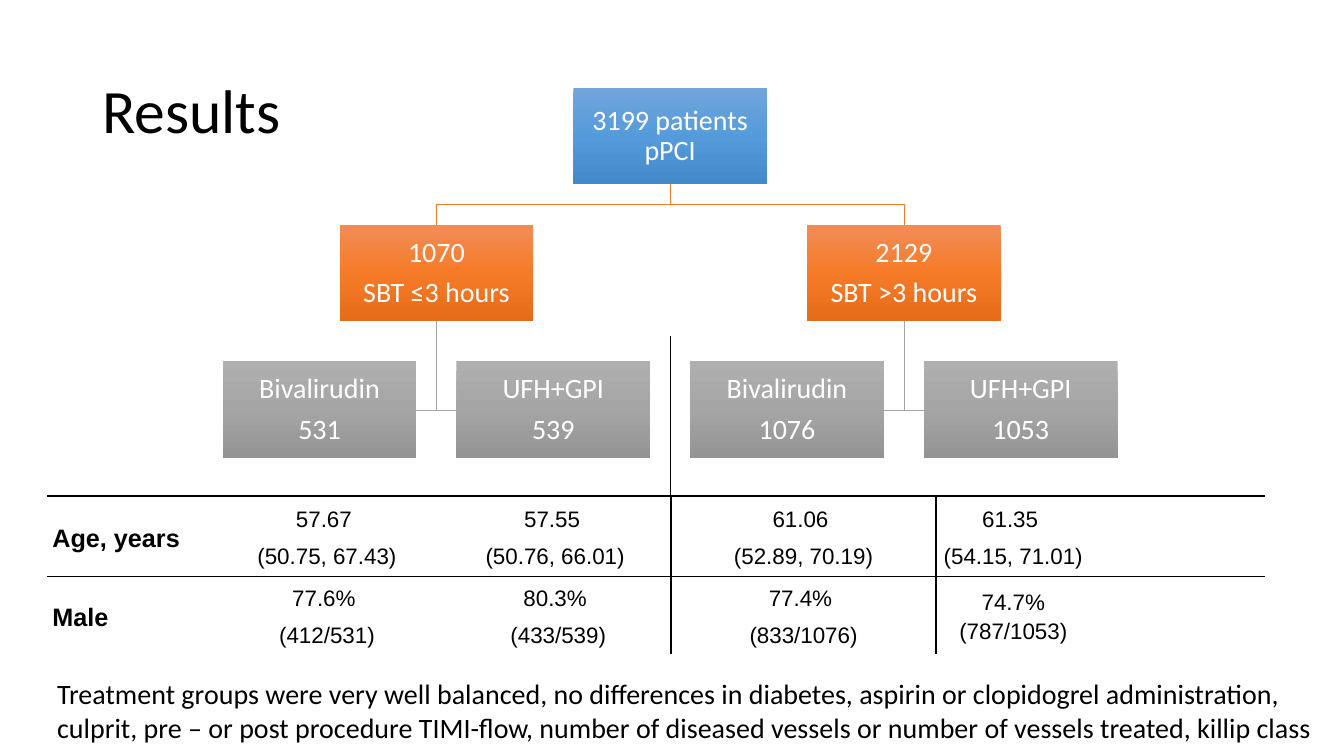
from copy import deepcopy
from lxml.etree import SubElement
from pptx import Presentation
from pptx.dml.color import RGBColor
from pptx.enum.shapes import MSO_CONNECTOR, MSO_SHAPE
from pptx.enum.text import MSO_ANCHOR, PP_ALIGN
from pptx.oxml.ns import qn
from pptx.util import Cm, Pt

BLACK = RGBColor(0x00, 0x00, 0x00)
WHITE = RGBColor(0xFF, 0xFF, 0xFF)
ORANGE = RGBColor(0xED, 0x7D, 0x31)
GRAY = RGBColor(0xA5, 0xA5, 0xA5)
BLUE_SHADES = [RGBColor(0x71, 0xA6, 0xDB), RGBColor(0x55, 0x9B, 0xDB), RGBColor(0x44, 0x8A, 0xCA)]
ORANGE_SHADES = [RGBColor(0xF1, 0x8C, 0x57), RGBColor(0xF6, 0x7B, 0x28), RGBColor(0xE5, 0x6C, 0x19)]
GRAY_SHADES = [RGBColor(0xAF, 0xAF, 0xAF), GRAY, RGBColor(0x93, 0x93, 0x93)]

TITLE = "Results"
ALL_PATIENTS = ["3199 patients pPCI"]
GROUPS = [
    (-1, ["1070", "SBT ≤3 hours"], [["Bivalirudin", "531"], ["UFH+GPI", "539"]]),
    (1, ["2129", "SBT >3 hours"], [["Bivalirudin", "1076"], ["UFH+GPI", "1053"]]),
]
TABLE_ROWS = [
    [["Age, years"], ["57.67 ", "(50.75, 67.43)"], ["57.55 ", "(50.76, 66.01)"],
     ["61.06 ", "(52.89, 70.19)"], ["61.35 ", "(54.15, 71.01)"], []],
    [["Male"], ["77.6% ", "(412/531)"], ["80.3%", " (433/539)"],
     ["77.4% ", "(833/1076)"], ["74.7% (787/1053)"], []],
]
COLUMN_WIDTHS = [4.22, 5.66, 5.84, 6.68, 3.89, 4.39]
ROW_HEIGHTS = [2.03, 1.96]
SUMMARY = ("Treatment groups were very well balanced, no differences in diabetes, aspirin or "
           "clopidogrel administration, culprit, pre – or post procedure TIMI-flow, number of "
           "diseased vessels or number of vessels treated, killip class")

CENTER = 16.89
TREE_TOP = 2.21
BOX_WIDTH, BOX_HEIGHT = 4.88, 2.44
COLUMN_STEP, LEVEL_STEP = 5.89, 3.45
TABLE_LEFT, TABLE_TOP = 1.19, 12.5
PLAIN_TABLE_STYLE = "{2D5ABB26-0587-4C30-8999-92F81FD0307C}"


def write(frame, lines, size, color=BLACK, font="Calibri", bold=False, align=PP_ALIGN.LEFT,
          spacing=1.0, before=0, after=0):
    for index, line in enumerate(lines):
        para = frame.paragraphs[0] if index == 0 else frame.add_paragraph()
        para.alignment = align
        para.line_spacing = spacing
        para.space_before, para.space_after = Pt(before), Pt(after)
        span = para.add_run()
        span.text = line
        span.font.size, span.font.name, span.font.bold = Pt(size), font, bold
        span.font.color.rgb = color


def add_text(page, left, top, width, height, text, anchor=MSO_ANCHOR.TOP, **style):
    box = page.shapes.add_textbox(Cm(left), Cm(top), Cm(width), Cm(height))
    box.text_frame.word_wrap = True
    box.text_frame.vertical_anchor = anchor
    write(box.text_frame, [text], **style)


def add_node(page, column, level, lines, shades):
    left = CENTER + column * COLUMN_STEP - BOX_WIDTH / 2
    top = TREE_TOP + level * LEVEL_STEP
    box = page.shapes.add_shape(MSO_SHAPE.RECTANGLE, Cm(left), Cm(top), Cm(BOX_WIDTH), Cm(BOX_HEIGHT))
    box.shadow.inherit = False
    box.line.fill.background()
    box.fill.gradient()
    box.fill.gradient_angle = 270
    stops = box._element.spPr.find(qn("a:gradFill")).find(qn("a:gsLst"))
    stops.append(deepcopy(stops[0]))
    for index, (stop, shade) in enumerate(zip(box.fill.gradient_stops, shades)):
        stop.position = index / 2
        stop.color.rgb = shade
    frame = box.text_frame
    frame.word_wrap = True
    frame.vertical_anchor = MSO_ANCHOR.MIDDLE
    frame.margin_left = frame.margin_right = frame.margin_top = frame.margin_bottom = Cm(0.03)
    write(frame, lines, 20, WHITE, align=PP_ALIGN.CENTER, spacing=0.9, after=7)


def add_branch(page, points, color):
    corners = [(Cm(x), Cm(y)) for x, y in points]
    builder = page.shapes.build_freeform(*corners[0])
    builder.add_line_segments(corners[1:], close=False)
    branch = builder.convert_to_shape()
    branch.shadow.inherit = False
    branch.fill.background()
    branch.line.color.rgb = color
    branch.line.width = Pt(0.5)


def add_tree(page):
    group_top = TREE_TOP + LEVEL_STEP
    middle = (TREE_TOP + BOX_HEIGHT + group_top) / 2
    leaf_middle = TREE_TOP + 2 * LEVEL_STEP + BOX_HEIGHT / 2
    add_node(page, 0, 0, ALL_PATIENTS, BLUE_SHADES)
    for column, lines, arms in GROUPS:
        x = CENTER + column * COLUMN_STEP
        add_branch(page, [(CENTER, TREE_TOP + BOX_HEIGHT), (CENTER, middle), (x, middle), (x, group_top)], ORANGE)
        add_node(page, column, 1, lines, ORANGE_SHADES)
        for side, arm in zip((-1, 1), arms):
            edge = x + side * (COLUMN_STEP - BOX_WIDTH) / 2
            add_branch(page, [(x, group_top + BOX_HEIGHT), (x, leaf_middle), (edge, leaf_middle)], GRAY)
            add_node(page, column + side / 2, 2, arm, GRAY_SHADES)


def add_border(cell, side):
    line = SubElement(cell._tc.get_or_add_tcPr(), qn("a:ln" + side), w=str(Pt(1)))
    SubElement(SubElement(line, qn("a:solidFill")), qn("a:srgbClr"), val=str(BLACK))


def add_results(page):
    holder = page.shapes.add_table(len(TABLE_ROWS), len(COLUMN_WIDTHS), Cm(TABLE_LEFT), Cm(TABLE_TOP),
                                   Cm(sum(COLUMN_WIDTHS)), Cm(sum(ROW_HEIGHTS)))
    table = holder.table
    table.first_row = table.horz_banding = False
    table._tbl.tblPr.find(qn("a:tableStyleId")).text = PLAIN_TABLE_STYLE
    for column, width in zip(table.columns, COLUMN_WIDTHS):
        column.width = Cm(width)
    for row, height in zip(table.rows, ROW_HEIGHTS):
        row.height = Cm(height)
    for r, row in enumerate(TABLE_ROWS):
        for c, lines in enumerate(row):
            cell = table.cell(r, c)
            cell.vertical_anchor = MSO_ANCHOR.MIDDLE
            cell.margin_left = cell.margin_right = Cm(0.13)
            cell.margin_top = cell.margin_bottom = 0
            sides = {2: "R", 3: "L"}.get(c, "") + ("TB" if r == 0 else "T")
            for side in sides:
                add_border(cell, side)
            cell.fill.background()
            heading = c == 0
            write(cell.text_frame, lines, 18 if heading else 16, font="Arial", bold=heading,
                  align=PP_ALIGN.LEFT if heading else PP_ALIGN.CENTER, spacing=1.15, before=6)


def main():
    deck = Presentation()
    deck.slide_width, deck.slide_height = Cm(33.87), Cm(19.05)
    page = deck.slides.add_slide(deck.slide_layouts[6])
    add_text(page, 2.33, 1.01, 29.21, 3.68, TITLE, anchor=MSO_ANCHOR.MIDDLE, size=44, spacing=0.9)
    add_results(page)
    add_tree(page)
    divider = page.shapes.add_connector(MSO_CONNECTOR.STRAIGHT, Cm(CENTER), Cm(8.46), Cm(CENTER), Cm(13.08))
    divider.line.color.rgb = BLACK
    divider.line.width = Pt(1)
    SubElement(divider._element.spPr, qn("a:effectLst"))
    add_text(page, TABLE_LEFT, 16.92, 32.36, 1.96, SUMMARY, size=20)
    deck.save("out.pptx")


if __name__ == "__main__":
    main()
